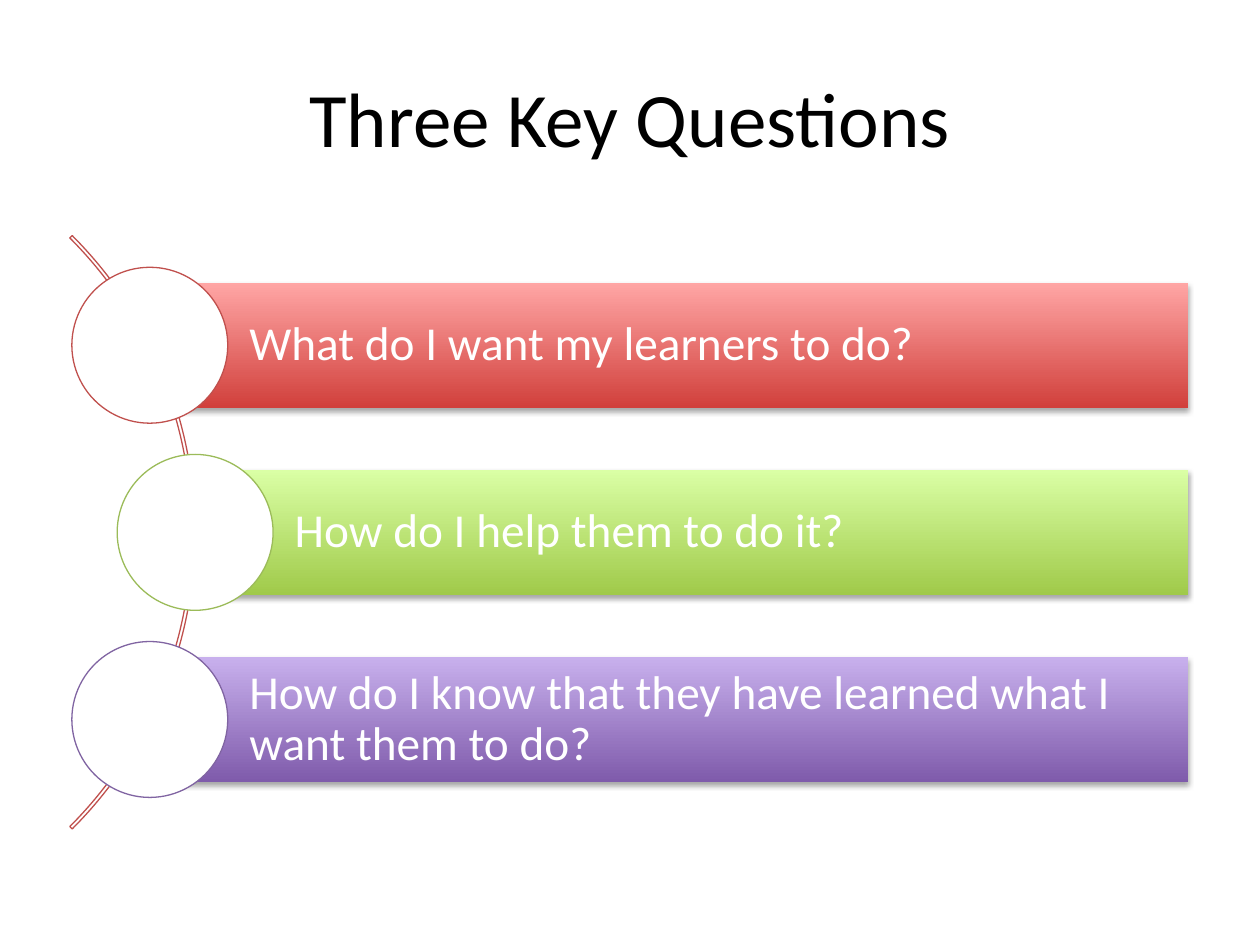
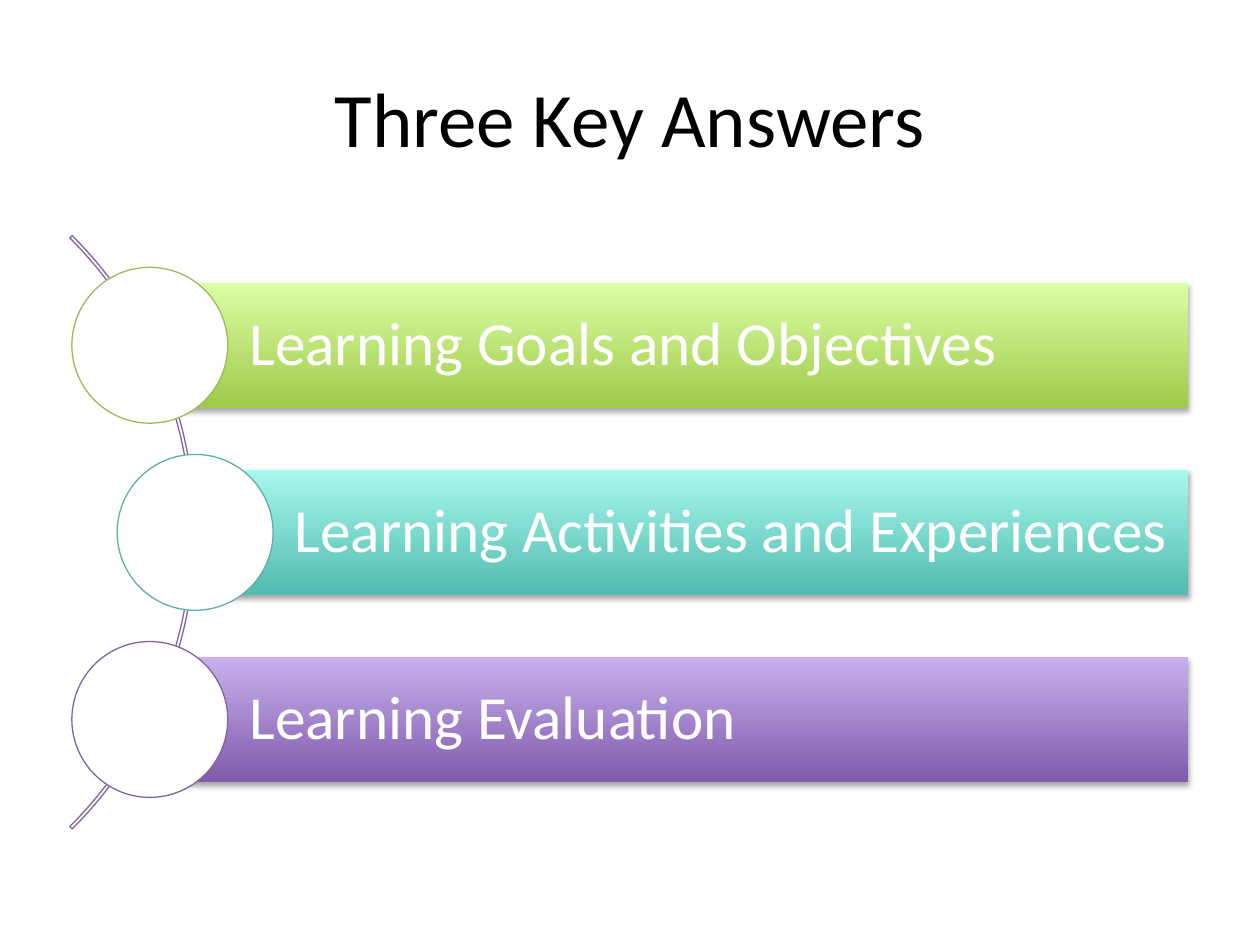
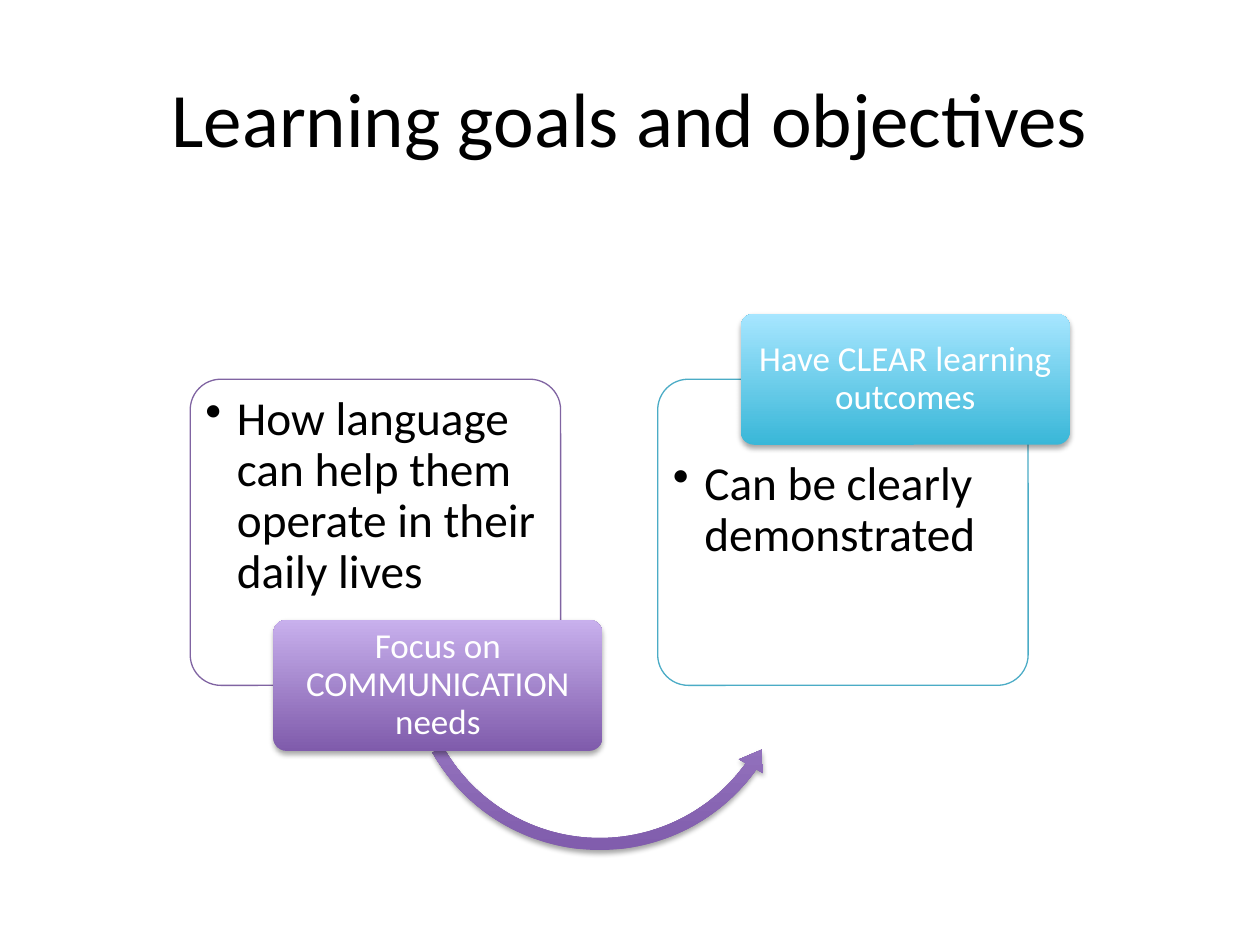
from dataclasses import dataclass

from lxml.etree import SubElement
from pptx import Presentation
from pptx.dml.color import RGBColor
from pptx.enum.shapes import MSO_SHAPE
from pptx.enum.text import MSO_ANCHOR, PP_ALIGN
from pptx.oxml.ns import qn
from pptx.util import Inches, Pt


@dataclass(frozen=True)
class Accent:
    line: str
    dark: str
    light: str


@dataclass(frozen=True)
class Box:
    left: float
    top: float
    width: float
    height: float

    def inches(self):
        return [Inches(v) for v in (self.left, self.top, self.width, self.height)]


@dataclass(frozen=True)
class Theme:
    font: str = "Calibri"
    ink: str = "000000"
    paper: str = "FFFFFF"
    title_size: float = 44
    question_size: float = 27
    answer_size: float = 35
    detail_size: float = 27
    label_size: float = 20
    outline: float = 0.75
    line_spacing: float = 0.9
    red: Accent = Accent("C0504D", "D1403C", "FFA6A5")
    green: Accent = Accent("9BBB59", "A0CA4A", "DAFFA5")
    teal: Accent = Accent("5EAFA6", "52BBAF", "A8F8ED")
    purple: Accent = Accent("8064A2", "7F5BAB", "C8B0ED")
    blue: Accent = Accent("4BACC6", "39B7D8", "A7E6FF")


THEME = Theme()
TITLE_BOX = Box(0.5, 0.3, 9, 1.25)
LIST_BOX = Box(0.57, 1.75, 8.86, 4.95)
PROCESS_BOX = Box(1.51, 2.49, 6.98, 4.32)


# Shared building blocks
def add_title_slide(prs, title):
    slide = prs.slides.add_slide(prs.slide_layouts[5])
    heading = slide.shapes.title
    heading.left, heading.top, heading.width, heading.height = TITLE_BOX.inches()
    heading.text_frame.vertical_anchor = MSO_ANCHOR.MIDDLE
    heading.text = title
    paragraph = heading.text_frame.paragraphs[0]
    paragraph.alignment = PP_ALIGN.CENTER
    style_font(paragraph.font, THEME.title_size, THEME.ink)
    return slide


def style_font(font, size, color):
    font.name = THEME.font
    font.size = Pt(size)
    font.color.rgb = RGBColor.from_string(color)


def add_outlined(slide, preset, box, color, filled=True):
    shape = slide.shapes.add_shape(preset, *box.inches())
    shape.shadow.inherit = False
    if filled:
        shape.fill.solid()
        shape.fill.fore_color.rgb = RGBColor.from_string(THEME.paper)
    else:
        shape.fill.background()
    shape.line.color.rgb = RGBColor.from_string(color)
    shape.line.width = Pt(THEME.outline)
    return shape


def add_glossy(slide, preset, box, accent):
    """Shape with an upward gradient and a soft shadow below it."""
    shape = slide.shapes.add_shape(preset, *box.inches())
    shape.fill.gradient()
    shape.fill.gradient_angle = 90
    for stop, color in zip(shape.fill.gradient_stops, (accent.dark, accent.light)):
        stop.color.rgb = RGBColor.from_string(color)
    shape.line.fill.background()
    shape.shadow.inherit = False
    effects = shape.element.spPr.find(qn("a:effectLst"))
    shadow = SubElement(effects, qn("a:outerShdw"), blurRad=str(Pt(3.1)),
                        dist=str(Pt(1.8)), dir="5400000", rotWithShape="0")
    tone = SubElement(shadow, qn("a:srgbClr"), val=THEME.ink)
    SubElement(tone, qn("a:alpha"), val="35000")
    return shape


def write(shape, text, size, color, insets, align=PP_ALIGN.LEFT, anchor=MSO_ANCHOR.MIDDLE):
    frame = shape.text_frame
    frame.word_wrap = True
    frame.vertical_anchor = anchor
    (frame.margin_left, frame.margin_top,
     frame.margin_right, frame.margin_bottom) = [Inches(v) for v in insets]
    paragraph = frame.paragraphs[0]
    paragraph.text = text
    paragraph.alignment = align
    paragraph.line_spacing = THEME.line_spacing
    style_font(paragraph.font, size, color)
    return paragraph


def set_adjustments(shape, values):
    for index, value in enumerate(values):
        shape.adjustments[index] = value


# Bars hung on a curved rail
def curved_list(slide, box, arc_color, items, size, inset):
    row = box.height / 10
    circle = 2.5 * row
    bulge = 0.36
    arc = 6.66
    arc_right = box.left + circle / 2 + bulge
    rail = add_outlined(
        slide, MSO_SHAPE.BLOCK_ARC,
        Box(arc_right - arc, box.top + (box.height - arc) / 2, arc, arc),
        arc_color, filled=False)
    set_adjustments(rail, (189, 27, 0.004))

    for index, (text, accent) in enumerate(items):
        center_y = box.top + (2 + 3 * index) * row
        shift = bulge if index == 1 else 0
        center_x = box.left + circle / 2 + shift
        bar = add_glossy(
            slide, MSO_SHAPE.RECTANGLE,
            Box(center_x, center_y - row, box.left + box.width - center_x, 2 * row), accent)
        write(bar, text, size, THEME.paper, (0.79, inset, inset, inset))
        add_outlined(
            slide, MSO_SHAPE.OVAL,
            Box(center_x - circle / 2, center_y - circle / 2, circle, circle), accent.line)


# Cards with overlapping labels, joined by a curved arrow
def add_card(slide, box, accent, detail, top_inset):
    card = add_outlined(slide, MSO_SHAPE.ROUNDED_RECTANGLE, box, accent.line)
    set_adjustments(card, (0.1,))
    paragraph = write(card, detail, THEME.detail_size, THEME.ink,
                      (0.05, top_inset, 0.05, 0.05), anchor=MSO_ANCHOR.TOP)
    properties = paragraph._p.get_or_add_pPr()
    properties.set("marL", str(Inches(0.25)))
    properties.set("indent", str(-Inches(0.25)))
    SubElement(properties, qn("a:buChar"), char="•")


def add_label(slide, box, accent, text):
    label = add_glossy(slide, MSO_SHAPE.ROUNDED_RECTANGLE, box, accent)
    set_adjustments(label, (0.1,))
    write(label, text, THEME.label_size, THEME.paper,
          (0.04, 0.03, 0.04, 0.03), align=PP_ALIGN.CENTER)


def alternating_process(slide, box, steps):
    card_width, card_height = 2.94, 2.43
    label_width, label_height = 2.61, 1.04
    overlap = label_height / 2
    card_top = box.top + overlap
    pitch = box.width - label_width - 0.66

    for index, (detail, label, accent) in enumerate(steps):
        left = box.left + index * pitch
        label_on_top = index % 2 == 1
        add_card(slide, Box(left, card_top, card_width, card_height), accent, detail,
                 0.05 + (overlap if label_on_top else 0))
        if index < len(steps) - 1:
            arrow_size = 3.18
            arrow = add_glossy(
                slide, MSO_SHAPE.LEFT_CIRCULAR_ARROW,
                Box(left + 1.66, box.top + box.height - arrow_size, arrow_size, arrow_size),
                accent)
            set_adjustments(arrow, (0.03, 3.64, 21.39, 90.25, 0.035))
        label_top = box.top if label_on_top else card_top + card_height - overlap
        add_label(slide, Box(left + 0.66, label_top, label_width, label_height),
                  accent, label)


def main():
    prs = Presentation()
    prs.slide_width, prs.slide_height = Inches(10), Inches(7.5)

    questions = add_title_slide(prs, "Three Key Questions")
    curved_list(questions, LIST_BOX, THEME.red.line, [
        ("What do I want my learners to do?", THEME.red),
        ("How do I help them to do it?", THEME.green),
        ("How do I know that they have learned what I want them to do?", THEME.purple),
    ], THEME.question_size, 0.07)

    answers = add_title_slide(prs, "Three Key Answers")
    curved_list(answers, LIST_BOX, THEME.purple.line, [
        ("Learning Goals and Objectives", THEME.green),
        ("Learning Activities and Experiences", THEME.teal),
        ("Learning Evaluation", THEME.purple),
    ], THEME.answer_size, 0.1)

    goals = add_title_slide(prs, "Learning goals and objectives")
    alternating_process(goals, PROCESS_BOX, [
        ("How language can help them operate in their daily lives",
         "Focus on COMMUNICATION needs", THEME.purple),
        ("Can be clearly demonstrated", "Have CLEAR learning outcomes", THEME.blue),
    ])

    prs.save("out.pptx")


if __name__ == "__main__":
    main()
